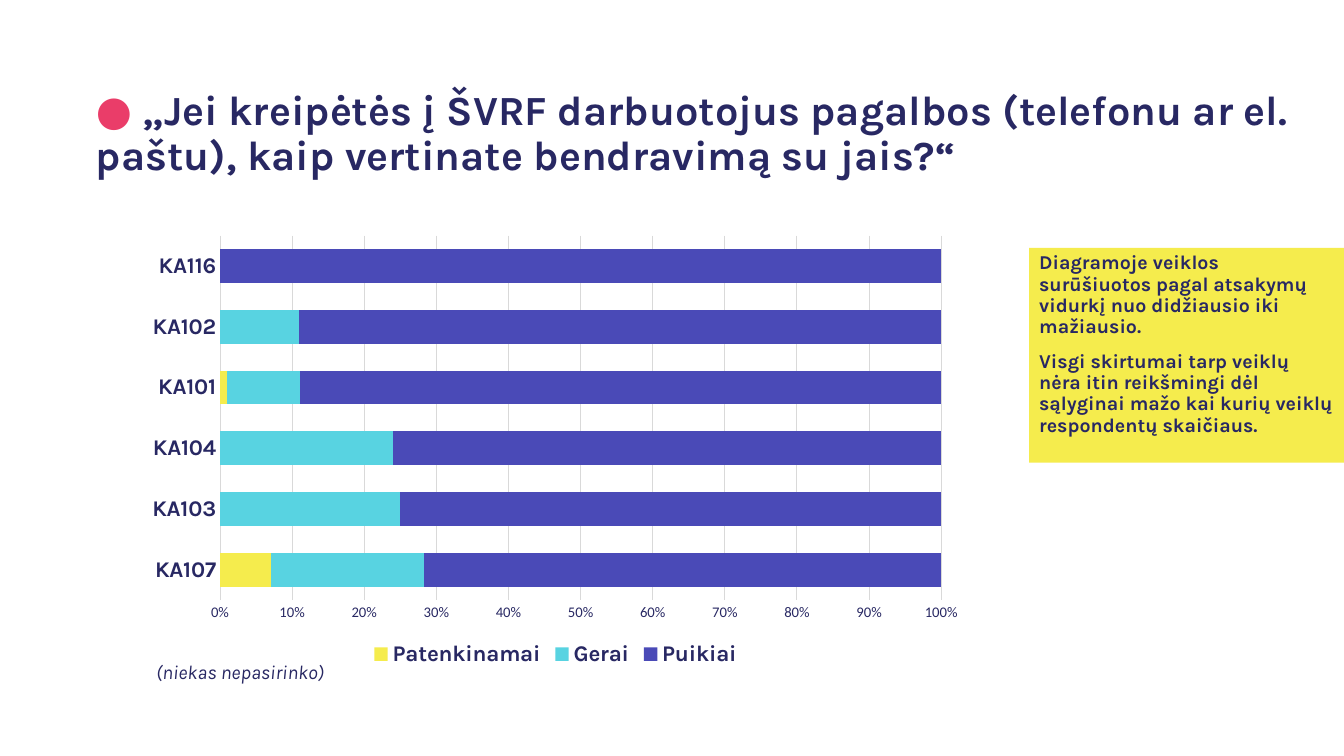
from dataclasses import dataclass
from typing import NamedTuple

import pptx
import pptx.chart.data
import pptx.dml.color
import pptx.enum.chart
import pptx.enum.shapes
import pptx.enum.text
import pptx.oxml
import pptx.oxml.ns
import pptx.util

RGB = pptx.dml.color.RGBColor


@dataclass(frozen=True)
class Theme:
    ink: RGB = RGB.from_string("282863")
    bullet: RGB = RGB.from_string("EA3D69")
    yellow: RGB = RGB.from_string("F5EC4D")
    cyan: RGB = RGB.from_string("58D3E1")
    violet: RGB = RGB.from_string("4A4AB7")
    grid: RGB = RGB.from_string("D9D9D9")
    font: str = "Karla"
    scale_font: str = "Calibri"
    title_size: float = 29.6
    label_size: float = 16
    body_size: float = 14
    scale_size: float = 10.5
    line_width: float = 0.75


class Frame(NamedTuple):
    """A place on the slide, in percent of its width and height."""
    left: float
    top: float
    width: float
    height: float


class Answer(NamedTuple):
    name: str
    values: tuple
    color: RGB


THEME = Theme()
SLIDE_WIDTH = pptx.util.Inches(13.33)
SLIDE_HEIGHT = pptx.util.Inches(7.5)

TITLE_FRAME = Frame(4.88, 11.2, 93.15, 15.73)
CHART_FRAME = Frame(10.13, 30, 62.4, 58.8)
COMMENT_FRAME = Frame(76.58, 32.8, 23.42, 28.4)
NOTE_FRAME = Frame(10.88, 86.67, 21.53, 4.53)
PLOT_SHARES = {"x": 0.1, "y": 0.02, "w": 0.86, "h": 0.82}

TITLE = ("„Jei kreipėtės į ŠVRF darbuotojus pagalbos (telefonu ar el. paštu), "
         "kaip vertinate bendravimą su jais?“")
COMMENTS = (
    "Diagramoje veiklos surūšiuotos pagal atsakymų vidurkį nuo didžiausio iki mažiausio.",
    "Visgi skirtumai tarp veiklų nėra itin reikšmingi dėl sąlyginai mažo kai kurių "
    "veiklų respondentų skaičiaus.",
)
NOTE = "(niekas nepasirinko)"
ACTIVITIES = ("KA107", "KA103", "KA104", "KA101", "KA102", "KA116")
ANSWERS = (
    Answer("Patenkinamai", (7, None, None, 1, None, None), THEME.yellow),
    Answer("Gerai", (21, 25, 24, 10, 11, None), THEME.cyan),
    Answer("Puikiai", (71, 75, 76, 88, 89, 100), THEME.violet),
)


def place(frame: Frame) -> tuple:
    """Turn a frame into left, top, width and height in EMU."""
    sides = (SLIDE_WIDTH, SLIDE_HEIGHT) * 2
    return tuple(round(side * share / 100) for side, share in zip(sides, frame))


def style_font(font, size: float, bold: bool = False, italic: bool = False,
               name: str = THEME.font) -> None:
    font.name = name
    font.size = pptx.util.Pt(size)
    font.bold = bold
    font.italic = italic
    font.color.rgb = THEME.ink


def style_line(line) -> None:
    line.color.rgb = THEME.grid
    line.width = pptx.util.Pt(THEME.line_width)


def space_paragraph(paragraph) -> None:
    paragraph.alignment = pptx.enum.text.PP_ALIGN.LEFT
    paragraph.line_spacing = 0.9
    paragraph.space_before = pptx.util.Pt(10)


def set_up_frame(text_frame) -> None:
    text_frame.word_wrap = True
    text_frame.auto_size = pptx.enum.text.MSO_AUTO_SIZE.NONE
    text_frame.vertical_anchor = pptx.enum.text.MSO_ANCHOR.TOP


def fill_title(title) -> None:
    title.left, title.top, title.width, title.height = place(TITLE_FRAME)
    set_up_frame(title.text_frame)
    paragraph = title.text_frame.paragraphs[0]
    space_paragraph(paragraph)
    style_font(paragraph.font, THEME.title_size, bold=True)
    properties = paragraph._p.get_or_add_pPr()
    properties.set("marL", str(pptx.util.Inches(0.2)))
    properties.set("indent", "0")
    for text, color in (("● ", THEME.bullet), (TITLE, THEME.ink)):
        run = paragraph.add_run()
        run.text = text
        run.font.color.rgb = color


def fix_plot_area(chart) -> None:
    """Give the inner plot area its share of the chart."""
    plot_area = chart._chartSpace.chart.plotArea
    for layout in plot_area.findall(pptx.oxml.ns.qn("c:layout")):
        plot_area.remove(layout)
    modes = "".join(f'<c:{side}Mode val="edge"/>' for side in "xy")
    shares = "".join(f'<c:{side} val="{share}"/>' for side, share in PLOT_SHARES.items())
    plot_area.insert(0, pptx.oxml.parse_xml(
        f'<c:layout {pptx.oxml.ns.nsdecls("c")}><c:manualLayout>'
        f'<c:layoutTarget val="inner"/>{modes}{shares}</c:manualLayout></c:layout>'))


def add_answer_chart(slide) -> None:
    data = pptx.chart.data.CategoryChartData()
    data.categories = ACTIVITIES
    for answer in ANSWERS:
        data.add_series(answer.name, answer.values)
    chart = slide.shapes.add_chart(
        pptx.enum.chart.XL_CHART_TYPE.BAR_STACKED_100, *place(CHART_FRAME), data).chart
    chart.has_title = False
    style_font(chart.font, THEME.scale_size, name=THEME.scale_font)
    fix_plot_area(chart)

    plot = chart.plots[0]
    plot.gap_width = 80
    plot.overlap = 100
    plot.vary_by_categories = False
    for series, answer in zip(plot.series, ANSWERS):
        series.format.fill.solid()
        series.format.fill.fore_color.rgb = answer.color

    for axis in (chart.category_axis, chart.value_axis):
        axis.major_tick_mark = pptx.enum.chart.XL_TICK_MARK.NONE
        axis.minor_tick_mark = pptx.enum.chart.XL_TICK_MARK.NONE
    chart.category_axis.has_major_gridlines = False
    style_line(chart.category_axis.format.line)
    style_font(chart.category_axis.tick_labels.font, THEME.label_size, bold=True)
    chart.value_axis.has_major_gridlines = True
    style_line(chart.value_axis.major_gridlines.format.line)
    chart.value_axis.format.line.fill.background()
    scale = chart.value_axis.tick_labels
    scale.number_format = "0%"
    scale.number_format_is_linked = False
    style_font(scale.font, THEME.scale_size, name=THEME.scale_font)

    chart.has_legend = True
    chart.legend.position = pptx.enum.chart.XL_LEGEND_POSITION.BOTTOM
    chart.legend.include_in_layout = False
    style_font(chart.legend.font, THEME.label_size, bold=True)


def add_comment_box(slide) -> None:
    box = slide.shapes.add_shape(
        pptx.enum.shapes.MSO_SHAPE.RECTANGLE, *place(COMMENT_FRAME))
    box.shadow.inherit = False
    box.fill.solid()
    box.fill.fore_color.rgb = THEME.yellow
    box.line.fill.background()
    set_up_frame(box.text_frame)
    box.text_frame.text = "\n".join(COMMENTS)
    for paragraph in box.text_frame.paragraphs:
        space_paragraph(paragraph)
        style_font(paragraph.font, THEME.body_size, bold=True)


def add_note(slide) -> None:
    text_frame = slide.shapes.add_textbox(*place(NOTE_FRAME)).text_frame
    set_up_frame(text_frame)
    text_frame.text = NOTE
    style_font(text_frame.paragraphs[0].font, THEME.body_size, italic=True)


def main() -> None:
    presentation = pptx.Presentation()
    presentation.slide_width = SLIDE_WIDTH
    presentation.slide_height = SLIDE_HEIGHT
    slide = presentation.slides.add_slide(presentation.slide_layouts.get_by_name("Title Only"))
    fill_title(slide.shapes.title)
    add_answer_chart(slide)
    add_comment_box(slide)
    add_note(slide)
    presentation.save("out.pptx")


if __name__ == "__main__":
    main()
